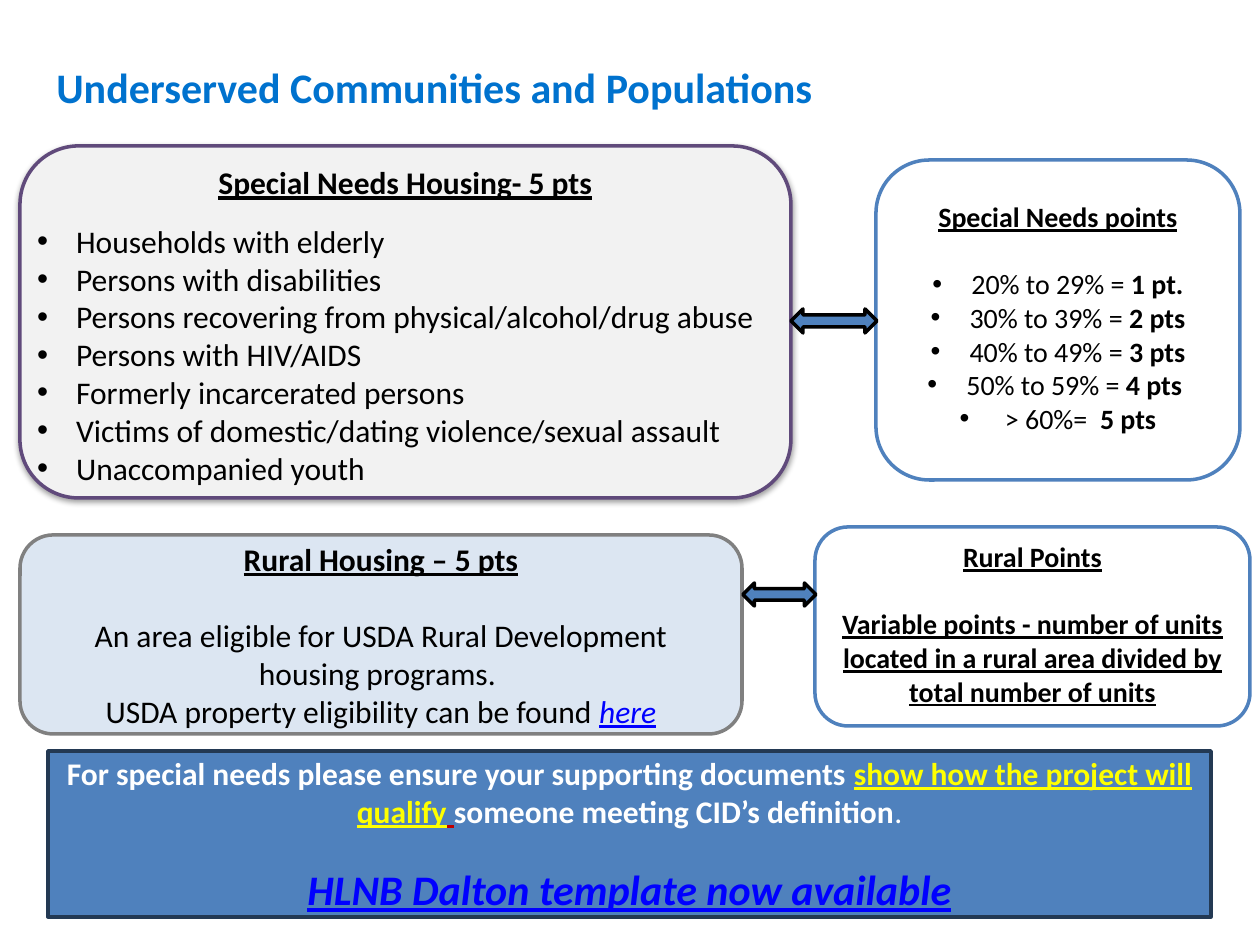
from lxml import etree
from pptx import Presentation
from pptx.dml.color import RGBColor
from pptx.enum.shapes import MSO_SHAPE
from pptx.enum.text import MSO_ANCHOR, PP_ALIGN
from pptx.oxml import parse_xml
from pptx.oxml.ns import nsdecls, qn
from pptx.util import Emu, Pt

PX = 914400 / 126


def box(kind, at, fill, line, pad=(13, 6, 13, 6)):
    """Add a filled, outlined shape and return it."""
    shape = slide.shapes.add_shape(kind, *[Emu(round(n * PX)) for n in at])
    shape.shadow.inherit = False
    shape.fill.solid()
    shape.fill.fore_color.rgb = RGBColor.from_string(fill)
    shape.line.color.rgb = RGBColor.from_string(line)
    shape.line.width = Pt(2)
    frame = shape.text_frame
    frame.word_wrap = True
    (frame.margin_left, frame.margin_top,
     frame.margin_right, frame.margin_bottom) = [Emu(round(n * PX)) for n in pad]
    return shape


def write(frame, runs, size, color="000000", gap=0, dot=False, align=PP_ALIGN.CENTER):
    """Add a paragraph of (text, style[, color]) runs; style holds b, i, u."""
    first = frame.paragraphs[0]
    para = frame.add_paragraph() if first.runs else first
    para.alignment = align
    if gap:
        para.space_before = Pt(gap)
    if dot:
        props = para._p.get_or_add_pPr()
        props.set("marL", str(round(39 * PX)))
        props.set("indent", str(-round(39 * PX)))
        font = etree.SubElement(props, qn("a:buFont"))
        font.set("typeface", "Arial")
        etree.SubElement(props, qn("a:buChar")).set("char", "•")
    para.font.name = "Calibri"
    para.font.size = Pt(size)
    para.font.color.rgb = RGBColor.from_string(color)
    for text, style, *tint in runs:
        run = para.add_run()
        run.text = text
        font = para.font if len(runs) == 1 else run.font
        font.bold = "b" in style
        font.italic = "i" in style
        font.underline = "u" in style
        if tint:
            font.color.rgb = RGBColor.from_string(tint[0])


deck = Presentation()
deck.slide_width = Emu(round(1260 * PX))
deck.slide_height = Emu(round(945 * PX))
slide = deck.slides.add_slide(deck.slide_layouts[6])

# Title
title = slide.shapes.add_textbox(*[Emu(round(n * PX)) for n in (44, 53, 1056, 107)])
title.text_frame.word_wrap = True
title.text_frame.margin_top = Emu(round(9 * PX))
write(title.text_frame, [("Underserved Communities and Populations", "b")],
      24, "0072CE", align=PP_ALIGN.LEFT)

# Special needs housing
needs = box(MSO_SHAPE.ROUNDED_RECTANGLE, (20, 146, 771, 352), "F2F2F2", "604A7B", (0, 0, 0, 0))
glow = needs._element.spPr.find(qn("a:effectLst"))
glow.append(parse_xml(
    f'<a:outerShdw {nsdecls("a")} blurRad="39370" dist="20320" dir="5400000" rotWithShape="0">'
    '<a:srgbClr val="000000"><a:alpha val="38000"/></a:srgbClr></a:outerShdw>'))
frame = needs.text_frame
frame.vertical_anchor = MSO_ANCHOR.TOP
write(frame, [("Special Needs Housing- 5 pts", "bu")], 18)
frame.paragraphs[0].space_after = Pt(12)
for text in ("Households with elderly", "Persons with disabilities",
             "Persons recovering from physical/alcohol/drug abuse",
             "Persons with HIV/AIDS", "Formerly incarcerated persons",
             "Victims of domestic/dating violence/sexual assault",
             "Unaccompanied youth"):
    write(frame, [(text, "")], 18, dot=True, align=PP_ALIGN.LEFT)

# Special needs points
side = (13, 0, 13, 6)
frame = box(MSO_SHAPE.FLOWCHART_ALTERNATE_PROCESS, (876, 160, 364, 320),
            "FFFFFF", "4F81BD", side).text_frame
write(frame, [("Special Needs points", "bu")], 16)
scores = [("20% to 29% = ", "1 pt."), ("30% to 39% = ", "2 pts"),
          ("40% to 49% = ", "3 pts"), ("50% to 59% = ", "4 pts "),
          (" > 60%=  ", "5 pts")]
for row, (share, score) in enumerate(scores):
    write(frame, [(share, ""), (score, "b")], 16, gap=0 if row else 19.5, dot=True)

# Rural housing
frame = box(MSO_SHAPE.ROUNDED_RECTANGLE, (20, 535, 722, 199), "DCE6F2", "808080").text_frame
write(frame, [("Rural Housing – 5 pts", "bu")], 18)
write(frame, [("An area eligible for USDA Rural Development housing programs. ", "")],
      18, gap=22)
write(frame, [("USDA property eligibility can be found ", ""), ("here", "iu", "0000FF")], 18)

# Rural points
frame = box(MSO_SHAPE.FLOWCHART_ALTERNATE_PROCESS, (815, 527, 435, 199),
            "FFFFFF", "4F81BD", side).text_frame
write(frame, [("Rural Points", "bu")], 16)
write(frame, [("Variable points - number of units located in a rural area "
               "divided by total number of units", "bu")], 16, gap=19.5)

# Double arrows
for at in ((791, 309, 86, 24), (743, 583, 73, 23)):
    box(MSO_SHAPE.LEFT_RIGHT_ARROW, at, "4F81BD", "000000")

# Closing banner
frame = box(MSO_SHAPE.RECTANGLE, (48, 751, 1163, 166), "4F81BD", "233953").text_frame
write(frame, [("For special needs please ensure your supporting documents ", "b"),
              ("show how the project will qualify", "bu", "FFFF00"),
              (" ", "bu", "C00000"),
              ("someone meeting CID’s definition", "b"),
              (".", "")], 18, "FFFFFF")
write(frame, [("HLNB Dalton template now available", "biu")], 24, "0000FF", gap=19.5)

deck.save("out.pptx")
